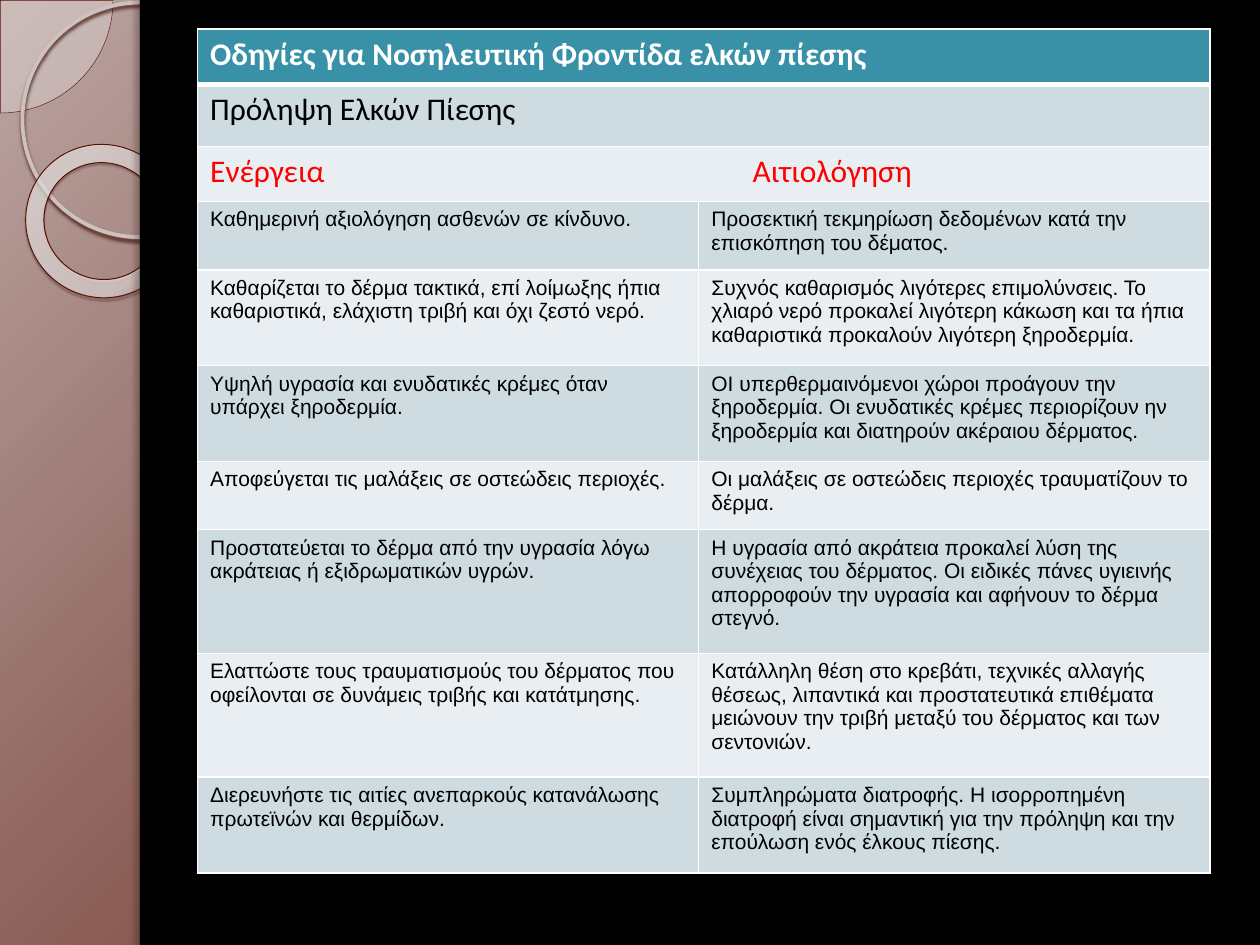
from lxml.etree import SubElement
from pptx import Presentation
from pptx.dml.color import RGBColor
from pptx.enum.shapes import MSO_SHAPE
from pptx.oxml import parse_xml
from pptx.oxml.ns import qn
from pptx.util import Pt

WHITE = RGBColor(0xFF, 0xFF, 0xFF)
BLACK = RGBColor(0x00, 0x00, 0x00)
RED = RGBColor(0xFF, 0x00, 0x00)
TEAL = RGBColor(0x38, 0x91, 0xA7)
BAND_DARK = RGBColor(0xCE, 0xDC, 0xE1)
BAND_LIGHT = RGBColor(0xE8, 0xEE, 0xF1)
MIST = RGBColor(0xEC, 0xEA, 0xE9)
SILVER = RGBColor(0xCE, 0xC2, 0xC0)
MAROON = RGBColor(0x59, 0x15, 0x02)
DARK_MAROON = RGBColor(0x56, 0x12, 0x00)
RING_SHADOW = RGBColor(0x44, 0x17, 0x0B)
DONUT_SHADOW = RGBColor(0x26, 0x09, 0x01)
BAR_SHADOW = RGBColor(0x29, 0x13, 0x0D)
# Gradient stops: position, colour, opacity, all but the colour in percent
BACKDROP = [(0, RGBColor(0xBB, 0xA6, 0xA3), 100),
            (40, RGBColor(0x91, 0x67, 0x61), 100),
            (100, RGBColor(0x53, 0x12, 0x00), 100)]
GLASS = [(0, RGBColor(0xF4, 0xF2, 0xF2), 70),
         (70, RGBColor(0xF9, 0xF8, 0xF8), 55),
         (100, RGBColor(0x5E, 0x14, 0x00), 60)]

HEADINGS = [
    "Οδηγίες για Νοσηλευτική Φροντίδα ελκών πίεσης",
    "Πρόληψη Ελκών Πίεσης",
    "Ενέργεια\tΑιτιολόγηση",
]
ACTIONS = [
    ("Καθημερινή αξιολόγηση ασθενών σε κίνδυνο.",
     "Προσεκτική τεκμηρίωση δεδομένων κατά την επισκόπηση του δέματος."),
    ("Καθαρίζεται το δέρμα τακτικά, επί λοίμωξης ήπια καθαριστικά, "
     "ελάχιστη τριβή και όχι ζεστό νερό.",
     "Συχνός καθαρισμός λιγότερες επιμολύνσεις. Το χλιαρό νερό προκαλεί λιγότερη "
     "κάκωση και τα ήπια καθαριστικά προκαλούν λιγότερη ξηροδερμία."),
    ("Υψηλή υγρασία και ενυδατικές κρέμες όταν υπάρχει ξηροδερμία.",
     "ΟΙ υπερθερμαινόμενοι χώροι προάγουν την ξηροδερμία. Οι ενυδατικές κρέμες "
     "περιορίζουν ην ξηροδερμία και διατηρούν ακέραιου δέρματος."),
    ("Αποφεύγεται τις μαλάξεις σε οστεώδεις περιοχές.",
     "Οι μαλάξεις σε οστεώδεις περιοχές τραυματίζουν το δέρμα."),
    ("Προστατεύεται το δέρμα από την υγρασία λόγω ακράτειας ή εξιδρωματικών υγρών.",
     "Η υγρασία από ακράτεια προκαλεί λύση της συνέχειας του δέρματος. Οι ειδικές "
     "πάνες υγιεινής απορροφούν την υγρασία και αφήνουν το δέρμα στεγνό."),
    ("Ελαττώστε τους τραυματισμούς του δέρματος που οφείλονται σε δυνάμεις "
     "τριβής και κατάτμησης.",
     "Κατάλληλη θέση στο κρεβάτι, τεχνικές αλλαγής θέσεως, λιπαντικά και "
     "προστατευτικά επιθέματα μειώνουν την τριβή μεταξύ του δέρματος και των σεντονιών."),
    ("Διερευνήστε τις αιτίες ανεπαρκούς κατανάλωσης πρωτεϊνών και θερμίδων.",
     "Συμπληρώματα διατροφής. Η ισορροπημένη διατροφή είναι σημαντική για την "
     "πρόληψη και την επούλωση ενός έλκους πίεσης."),
]
COLUMN_WIDTHS = [286.4, 292.2]
ROW_HEIGHTS = [31.5, 35.5, 31.5, 39, 54.8, 54.8, 39, 70.7, 70.7, 54.8]


def add_color(parent, color, opacity):
    node = SubElement(parent, qn("a:srgbClr"), val=str(color))
    if opacity < 100:
        SubElement(node, qn("a:alpha"), val=str(opacity * 1000))


def set_circle_gradient(owner, stops, focus):
    """Give an element that already has a gradient fill a circular one."""
    gradient = owner.xpath(".//a:gradFill")[0]
    for child in list(gradient):
        gradient.remove(child)
    stop_list = SubElement(gradient, qn("a:gsLst"))
    for position, color, opacity in stops:
        stop = SubElement(stop_list, qn("a:gs"), pos=str(position * 1000))
        add_color(stop, color, opacity)
    circle = SubElement(gradient, qn("a:path"))
    circle.set("path", "circle")
    sides = {side: str(value * 1000) for side, value in zip("ltrb", focus)}
    SubElement(circle, qn("a:fillToRect"), **sides)


class SlideBuilder:
    heading_font, body_font = "Calibri", "Arial"
    heading_size, body_size = 18, 12
    second_heading_tab = 310

    def __init__(self, page):
        self.page = page

    def backdrop(self, stops, focus):
        self.page.background.fill.gradient()
        set_circle_gradient(self.page.element, stops, focus)

    def shape(self, kind, bounds, fill=None, opacity=100, line=None, line_width=1):
        box = self.page.shapes.add_shape(kind, *map(Pt, bounds))
        box.shadow.inherit = False
        if fill is None:
            box.fill.background()
        else:
            box.fill.solid()
            box.fill.fore_color.rgb = fill
            if opacity < 100:
                color = box.element.spPr.find(qn("a:solidFill"))[0]
                SubElement(color, qn("a:alpha"), val=str(opacity * 1000))
        if line is None:
            box.line.fill.background()
        else:
            box.line.color.rgb = line
            box.line.width = Pt(line_width)
        return box

    def shadow(self, box, color, opacity, blur, distance, angle):
        effects = box.element.spPr.find(qn("a:effectLst"))
        node = SubElement(effects, qn("a:outerShdw"), blurRad=str(Pt(blur)),
                          dist=str(Pt(distance)), dir=str(angle * 60000),
                          algn="tl", rotWithShape="0")
        add_color(node, color, opacity)

    def table(self, left, top, widths, heights):
        frame = self.page.shapes.add_table(
            len(heights), len(widths), Pt(left), Pt(top),
            Pt(sum(widths)), Pt(sum(heights)))
        grid = frame.table
        grid.first_row = grid.horz_banding = False
        for column, width in zip(grid.columns, widths):
            column.width = Pt(width)
        for row, height in zip(grid.rows, heights):
            row.height = Pt(height)
        return grid

    def cell(self, cell, text, fill, color, font, size, bold=False, top=1, bottom=1):
        properties = cell._tc.get_or_add_tcPr()
        for tag, width in (("lnL", 1), ("lnR", 1), ("lnT", top), ("lnB", bottom)):
            border = SubElement(properties, qn("a:" + tag), w=str(Pt(width)))
            add_color(SubElement(border, qn("a:solidFill")), WHITE, 100)
        cell.fill.solid()
        cell.fill.fore_color.rgb = fill
        cell.text_frame.text = text
        para = cell.text_frame.paragraphs[0]
        for span in para.runs:
            span.font.name, span.font.size = font, Pt(size)
            span.font.bold, span.font.color.rgb = bold, color
        if "\t" in text:
            tabs = SubElement(para._p.get_or_add_pPr(), qn("a:tabLst"))
            SubElement(tabs, qn("a:tab"), pos=str(Pt(self.second_heading_tab)), algn="l")

    def decoration(self):
        pie = self.shape(MSO_SHAPE.PIE, (-64.2, -64.2, 128.8, 128.8), MIST, 33,
                         MAROON, 0.25)
        pie.adjustments[0], pie.adjustments[1] = 0, 54
        ring = self.shape(MSO_SHAPE.OVAL, (12.8, 1.5, 134, 134),
                          line=SILVER, line_width=2.15)
        self.shadow(ring, RING_SHADOW, 85, 2, 2, 90)
        donut = self.shape(MSO_SHAPE.DONUT, (14.4, 82.8, 88.6, 87.1),
                           line=DARK_MAROON, line_width=0.58)
        donut.adjustments[0] = 0.12
        donut.rotation = 38.6
        donut.fill.gradient()
        set_circle_gradient(donut.element.spPr, GLASS, (-408, -50, 508, 150))
        self.shadow(donut, DONUT_SHADOW, 35, 1, 1.2, 75)
        self.shape(MSO_SHAPE.RECTANGLE, (79.9, 0, 640.1, 540), BLACK)
        edge = self.shape(MSO_SHAPE.RECTANGLE, (79.9, 0, 5.8, 540), BLACK)
        self.shadow(edge, BAR_SHADOW, 25, 3, 3, 180)

    def care_guide(self):
        grid = self.table(112.9, 16.7, COLUMN_WIDTHS, ROW_HEIGHTS)
        looks = [(TEAL, WHITE, 1, 3), (BAND_DARK, BLACK, 3, 1), (BAND_LIGHT, RED, 1, 1)]
        for row, (text, (fill, color, top, bottom)) in enumerate(zip(HEADINGS, looks)):
            grid.cell(row, 0).merge(grid.cell(row, 1))
            for column, words in enumerate((text, "")):
                self.cell(grid.cell(row, column), words, fill, color, self.heading_font,
                          self.heading_size, row == 0, top, bottom)
        for row, texts in enumerate(ACTIONS, start=len(HEADINGS)):
            fill = BAND_DARK if row % 2 else BAND_LIGHT
            for column, text in enumerate(texts):
                self.cell(grid.cell(row, column), text, fill, BLACK,
                          self.body_font, self.body_size)


def main():
    deck = Presentation()
    deck.slide_width, deck.slide_height = Pt(720), Pt(540)
    builder = SlideBuilder(deck.slides.add_slide(deck.slide_layouts[6]))
    builder.backdrop(BACKDROP, (-24, -20, 124, 120))
    builder.decoration()
    builder.care_guide()
    deck.save("out.pptx")


if __name__ == "__main__":
    main()
